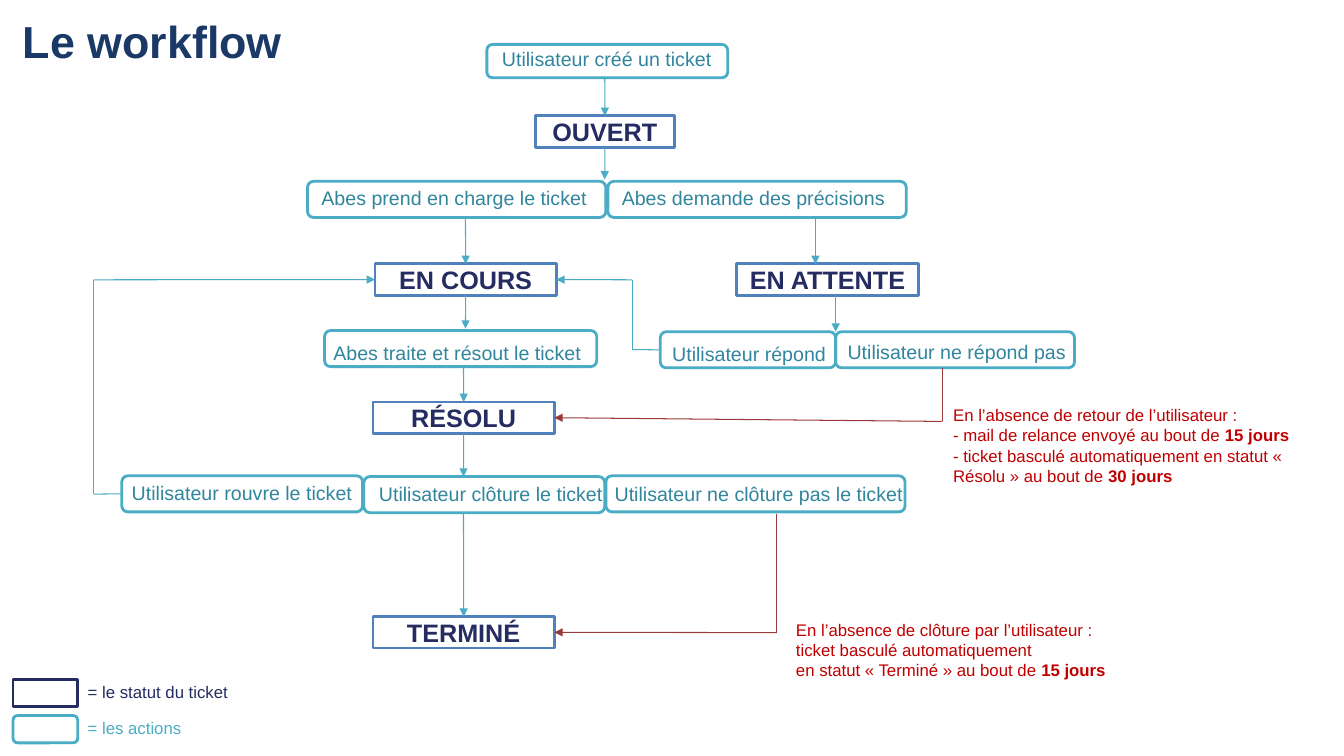
from dataclasses import dataclass
from enum import IntEnum
from itertools import pairwise

from lxml.etree import SubElement
from pptx import Presentation
from pptx.dml.color import RGBColor as Rgb
from pptx.enum.shapes import MSO_CONNECTOR as Link, MSO_SHAPE as Preset
from pptx.enum.text import MSO_ANCHOR as Anchor, PP_ALIGN as Align
from pptx.oxml.ns import qn
from pptx.util import Cm, Pt


class Side(IntEnum):
    TOP = 0
    LEFT = 1
    BOTTOM = 2
    RIGHT = 3


@dataclass(frozen=True)
class Theme:
    font: str = "Arial"
    title: str = "1A3967"
    status: str = "252C61"
    status_line: str = "4F81BD"
    action: str = "31859C"
    action_line: str = "4BACC6"
    alert: str = "C00000"
    alert_line: str = "9A3A3A"
    paper: str = "FFFFFF"
    title_size: float = 32
    status_size: float = 18
    action_size: float = 14
    note_size: float = 12
    box_width: float = 2
    route_width: float = 0.75


def write(frame, text, font, size, color, bold=False, align=Align.LEFT):
    frame.word_wrap = True
    for index, line in enumerate(text.split("\n")):
        paragraph = frame.add_paragraph() if index else frame.paragraphs[0]
        paragraph.alignment = align
        for part, words in enumerate(line.split("**")):
            if words:
                run = paragraph.add_run()
                run.text = words
                run.font.name = font
                run.font.size = Pt(size)
                run.font.bold = bold or part % 2 == 1
                run.font.color.rgb = Rgb.from_string(color)


class Workflow:
    def __init__(self, slide, theme):
        self.shapes = slide.shapes
        self.theme = theme

    def text(self, words, left, top, width, height, **style):
        area = self.shapes.add_textbox(Cm(left), Cm(top), Cm(width), Cm(height))
        write(area.text_frame, words, font=self.theme.font, **style)

    def box(self, preset, left, top, width, height, color, fill=None):
        outline = self.shapes.add_shape(preset, Cm(left), Cm(top), Cm(width), Cm(height))
        outline.shadow.inherit = False
        outline.line.color.rgb = Rgb.from_string(color)
        outline.line.width = Pt(self.theme.box_width)
        if fill:
            outline.fill.solid()
            outline.fill.fore_color.rgb = Rgb.from_string(fill)
        else:
            outline.fill.background()
        return outline

    def status(self, name, left, top, width=4.57):
        theme = self.theme
        state = self.box(Preset.RECTANGLE, left, top, width, 0.79, theme.status_line, theme.paper)
        state.text_frame.vertical_anchor = Anchor.MIDDLE
        write(state.text_frame, name, font=theme.font, size=theme.status_size,
              color=theme.status, bold=True, align=Align.CENTER)
        return state

    def action(self, words, left, top, width, height=0.91, shift=(0, 0)):
        theme = self.theme
        step = self.box(Preset.ROUNDED_RECTANGLE, left, top, width, height, theme.action_line)
        self.text(words, left + shift[0], top + shift[1], width + 0.8, 0.86,
                  size=theme.action_size, color=theme.action)
        return step

    def note(self, words, left, top, width, height, color):
        self.text(words, left, top, width, height, size=self.theme.note_size, color=color)

    def route(self, *stops, color=None):
        for start, end in pairwise(stops):
            segment = self.shapes.add_connector(Link.STRAIGHT, 0, 0, 0, 0)
            if isinstance(start[1], Side):
                segment.begin_connect(*start)
            else:
                segment.begin_x, segment.begin_y = map(Cm, start)
            if isinstance(end[1], Side):
                segment.end_connect(*end)
            else:
                segment.end_x, segment.end_y = map(Cm, end)
            segment.line.color.rgb = Rgb.from_string(color or self.theme.action_line)
            segment.line.width = Pt(self.theme.route_width)
            properties = segment.element.spPr
            if end is stops[-1]:
                SubElement(properties.find(qn("a:ln")), qn("a:tailEnd"), type="triangle")
            SubElement(properties, qn("a:effectLst"))


def main():
    deck = Presentation()
    deck.slide_width, deck.slide_height = Cm(33.87), Cm(19.05)
    theme = Theme()
    flow = Workflow(deck.slides.add_slide(deck.slide_layouts[6]), theme)

    flow.text("Le workflow", 0.33, 0.23, 7.3, 1.63,
              size=theme.title_size, color=theme.title, bold=True)

    opened = flow.status("OUVERT", 13.49, 2.92, 3.51)
    in_progress = flow.status("EN COURS", 9.45, 6.65)
    flow.status("EN ATTENTE", 18.57, 6.65)
    resolved = flow.status("RÉSOLU", 9.4, 10.13)
    finished = flow.status("TERMINÉ", 9.4, 15.54)

    flow.action("Utilisateur créé un ticket", 12.27, 1.12, 6.07, 0.84, shift=(0.13, -0.05))
    flow.action("Abes prend en charge le ticket", 7.75, 4.57, 7.52, shift=(0.1, 0))
    flow.action("Abes demande des précisions", 15.32, 4.57, 7.52, shift=(0.1, 0))
    flow.action("Abes traite et résout le ticket", 8.18, 8.33, 6.86, shift=(-0.03, 0.13))
    answer = flow.action("Utilisateur répond", 16.64, 8.36, 4.42, shift=(0.05, 0.13))
    flow.action("Utilisateur ne répond pas", 21.06, 8.36, 6.02, shift=(0.05, 0.07))
    reopen = flow.action("Utilisateur rouvre le ticket", 3.07, 11.99, 6.07)
    flow.action("Utilisateur clôture le ticket", 9.17, 12.01, 6.07, shift=(0.13, 0))
    flow.action("Utilisateur ne clôture pas le ticket", 15.27, 11.99, 7.54, shift=(-0.03, 0.02))

    flow.route((15.24, 1.93), (opened, Side.TOP))
    flow.route((opened, Side.BOTTOM), (15.24, 4.52))
    flow.route((11.73, 5.46), (in_progress, Side.TOP))
    flow.route((20.55, 5.46), (20.55, 6.65))
    flow.route((in_progress, Side.BOTTOM), (11.73, 8.28))
    flow.route((21.06, 7.44), (21.06, 8.36))
    flow.route((11.68, 9.25), (resolved, Side.TOP))
    flow.route((resolved, Side.BOTTOM), (11.68, 12.01))
    flow.route((11.68, 12.93), (finished, Side.TOP))
    flow.route((answer, Side.LEFT), (15.93, 8.81), (15.93, 7.05), (in_progress, Side.RIGHT))
    flow.route((reopen, Side.LEFT), (2.36, 12.45), (2.36, 7.05), (in_progress, Side.LEFT))
    flow.route((23.75, 9.27), (23.75, 10.62), (resolved, Side.RIGHT), color=theme.alert_line)
    flow.route((19.58, 12.95), (19.58, 15.94), (finished, Side.RIGHT), color=theme.alert_line)

    flow.note("En l’absence de retour de l’utilisateur :\n"
              "- mail de relance envoyé au bout de **15 jours**\n"
              "- ticket basculé automatiquement en statut « Résolu » au bout de **30 jours**",
              23.77, 10.08, 9.53, 2.31, theme.alert)
    flow.note("En l’absence de clôture par l’utilisateur :\n"
              "ticket basculé automatiquement\n"
              "en statut « Terminé » au bout de **15 jours**",
              19.81, 15.49, 10.72, 1.8, theme.alert)

    legend = (
        (Preset.RECTANGLE, "= le statut du ticket", 17.12, theme.status),
        (Preset.ROUNDED_RECTANGLE, "= les actions", 18.03, theme.action_line),
    )
    for preset, meaning, top, color in legend:
        flow.box(preset, 0.33, top, 1.63, 0.69, color)
        flow.note(meaning, 1.96, top - 0.06, 4.2, 0.76, color)

    deck.save("out.pptx")


if __name__ == "__main__":
    main()
